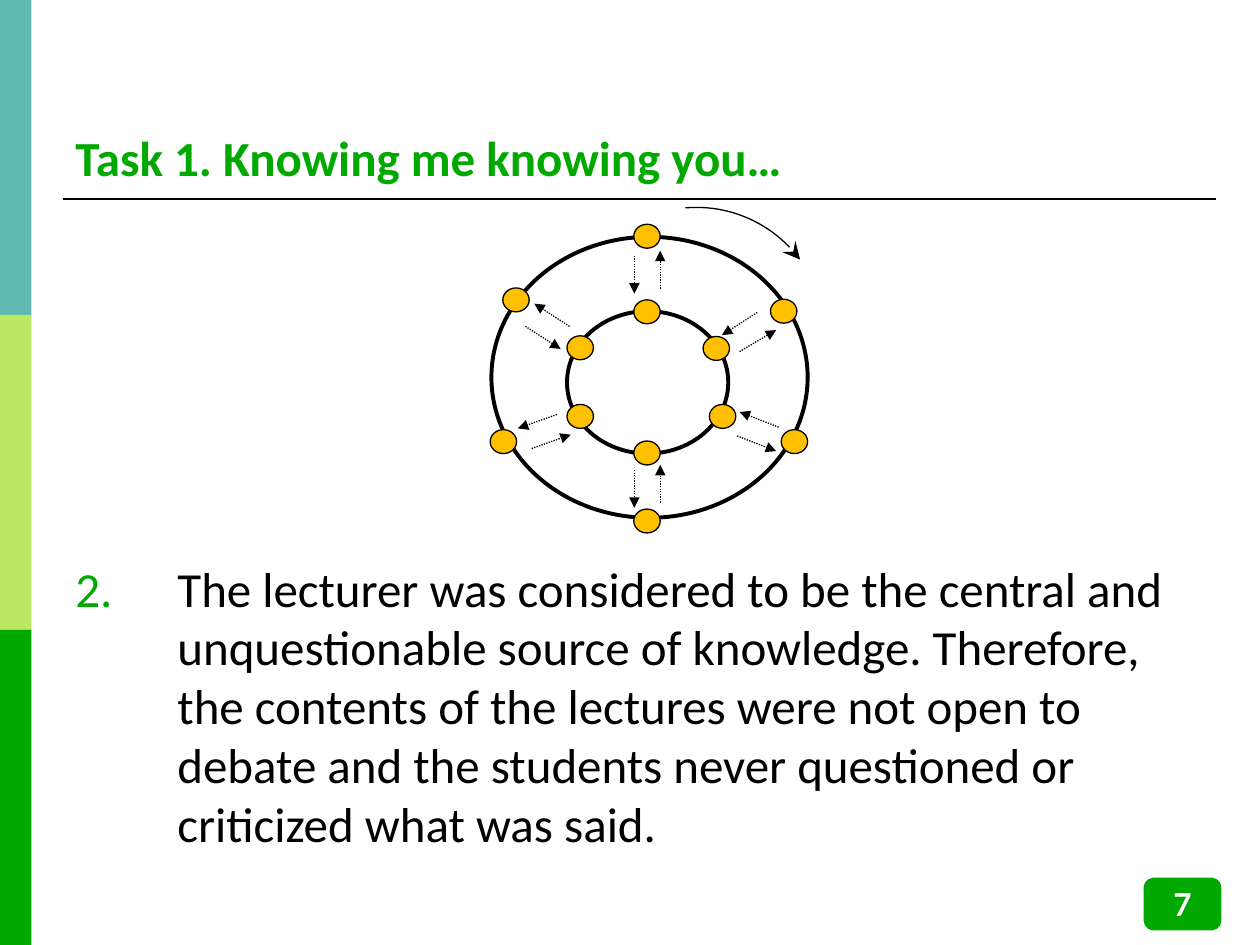
from lxml import etree
from pptx import Presentation
from pptx.dml.color import RGBColor
from pptx.enum.dml import MSO_LINE
from pptx.enum.shapes import MSO_CONNECTOR, MSO_SHAPE as SHAPE
from pptx.enum.text import MSO_ANCHOR as ANCHOR, PP_ALIGN as ALIGN
from pptx.oxml.ns import qn
from pptx.util import Inches, Pt

WIDTH, HEIGHT = Inches(10), Inches(7.5)
CELL = WIDTH // 100  # the slide is 100 columns by 75 rows
GREEN, BLACK, WHITE, AMBER = "00A800", "000000", "FFFFFF", "FFC000"
BAND_COLORS = ["5FB8B2", "BAE860", GREEN]
RINGS = [(39, 18.8, 25.1, 22.3), (45, 24.7, 12.8, 11.3)]
DOT_W, DOT_H = 2.1, 1.9
# Centres of the dots, as (outer, inner) partners
PARTNERS = [
    ((51.35, 18.75), (51.35, 24.75)),
    ((40.95, 23.8), (46.05, 27.6)),
    ((39.95, 35.05), (46.05, 33.05)),
    ((51.35, 41.35), (51.35, 35.95)),
    ((62.2, 24.7), (56.85, 27.65)),
    ((63.05, 35.05), (57.35, 33.05)),
]
EXCHANGES = [
    ((50.35, 20.3), (50.35, 23.3)), ((52.4, 22.9), (52.4, 19.9)),
    ((50.35, 37.3), (50.35, 40.3)), ((52.4, 39.9), (52.4, 36.9)),
    ((45.2, 25.9), (42.4, 24.1)), ((41.7, 25.9), (44.5, 27.7)),
    ((44.2, 32.9), (41.1, 34)), ((42.2, 35.6), (45.3, 34.5)),
    ((60.1, 24.8), (57.3, 26.6)), ((58.7, 27.9), (61.6, 26.2)),
    ((61.8, 33.9), (58.7, 32.7)), ((58.5, 34.6), (61.6, 35.8)),
]
ROTATION = [(54.4, 16.5), (57.9, 16.2), (61.3, 17.7), (63.5, 20.6)]
STATEMENT = (
    "The lecturer was considered to be the central and unquestionable source "
    "of knowledge. Therefore, the contents of the lectures were not open to "
    "debate and the students never questioned or criticized what was said."
)


def grid(*cells):
    return [round(c * CELL) for c in cells]


def rgb(color):
    return RGBColor.from_string(color)


def set_line(line, color, width):
    line.color.rgb = rgb(color)
    line.width = Pt(width)


def add_arrowhead(line, kind, size="med"):
    etree.SubElement(line._get_or_add_ln(), qn("a:tailEnd"),
                     type=kind, w=size, len=size)


def add_shape(shapes, kind, box, fill, line=None, width=0.75):
    sp = shapes.add_shape(kind, *grid(*box))
    sp.shadow.inherit = False
    sp.fill.solid()
    sp.fill.fore_color.rgb = rgb(fill)
    if line:
        set_line(sp.line, line, width)
    else:
        sp.line.fill.background()
    return sp


def add_line(shapes, start, end, width=0.75):
    cxn = shapes.add_connector(MSO_CONNECTOR.STRAIGHT, *grid(*start, *end))
    set_line(cxn.line, BLACK, width)
    etree.SubElement(cxn._element.spPr, qn("a:effectLst"))
    return cxn


def add_exchange(shapes, start, end):
    cxn = add_line(shapes, start, end)
    cxn.line.dash_style = MSO_LINE.ROUND_DOT
    add_arrowhead(cxn.line, "triangle")


def add_curved_arrow(shapes, controls, steps=24):
    """Draw a cubic Bezier curve as short steps with an arrowhead at its end."""
    points = []
    for i in range(steps + 1):
        t = i / steps
        weights = ((1 - t) ** 3, 3 * t * (1 - t) ** 2, 3 * t * t * (1 - t), t ** 3)
        points.append(grid(*(sum(w * c for w, c in zip(weights, axis))
                             for axis in zip(*controls))))
    builder = shapes.build_freeform(*points[0])
    builder.add_line_segments(points[1:], close=False)
    sp = builder.convert_to_shape()
    sp.shadow.inherit = False
    sp.fill.background()
    set_line(sp.line, BLACK, 0.75)
    add_arrowhead(sp.line, "stealth", "lg")


def write(sp, text, size, color, font="Calibri", bold=False,
          align=ALIGN.LEFT, anchor=ANCHOR.TOP):
    tf = sp.text_frame
    tf.word_wrap = True
    tf.vertical_anchor = anchor
    p = tf.paragraphs[0]
    p.alignment = align
    r = p.add_run()
    r.text = text
    r.font.name, r.font.size, r.font.bold = font, Pt(size), bold
    r.font.color.rgb = rgb(color)
    return p


def add_number(p, start, color, indent):
    pPr = p._p.get_or_add_pPr()
    pPr.set("marL", str(indent))
    pPr.set("indent", str(-indent))
    clr = etree.SubElement(pPr, qn("a:buClr"))
    etree.SubElement(clr, qn("a:srgbClr"), val=color)
    etree.SubElement(pPr, qn("a:buAutoNum"), type="arabicPeriod", startAt=str(start))


def add_circles_diagram(s):
    shapes = s.shapes.add_group_shape().shapes
    for ring in RINGS:
        add_shape(shapes, SHAPE.OVAL, ring, WHITE, BLACK, 2.25)
    for pair in PARTNERS:
        for x, y in pair:
            add_shape(shapes, SHAPE.FLOWCHART_CONNECTOR,
                      (x - DOT_W / 2, y - DOT_H / 2, DOT_W, DOT_H), AMBER, BLACK)
    for start, end in EXCHANGES:
        add_exchange(shapes, start, end)
    add_curved_arrow(shapes, ROTATION)


def main():
    prs = Presentation()
    prs.slide_width, prs.slide_height = WIDTH, HEIGHT
    s = prs.slides.add_slide(prs.slide_layouts[6])

    for i, color in enumerate(BAND_COLORS):
        add_shape(s.shapes, SHAPE.RECTANGLE, (0, 25 * i, 2.5, 25), color)
    add_line(s.shapes, (5, 15.8), (96.5, 15.8), 1.5)

    title = s.shapes.add_textbox(*grid(5, 2.8, 91.5, 12.5))
    write(title, "Task 1. Knowing me knowing you…", 28, GREEN,
          bold=True, anchor=ANCHOR.BOTTOM)
    body = s.shapes.add_textbox(*grid(5, 43.8, 91.5, 23.2))
    add_number(write(body, STATEMENT, 28, BLACK), 2, GREEN, grid(8.1)[0])

    add_circles_diagram(s)

    badge = add_shape(s.shapes, SHAPE.ROUNDED_RECTANGLE,
                      (90.9, 69.8, 5.9, 3.9), GREEN, GREEN, 2)
    write(badge, "7", 18, WHITE, font="Lato", bold=True,
          align=ALIGN.CENTER, anchor=ANCHOR.MIDDLE)
    prs.save("out.pptx")


if __name__ == "__main__":
    main()
